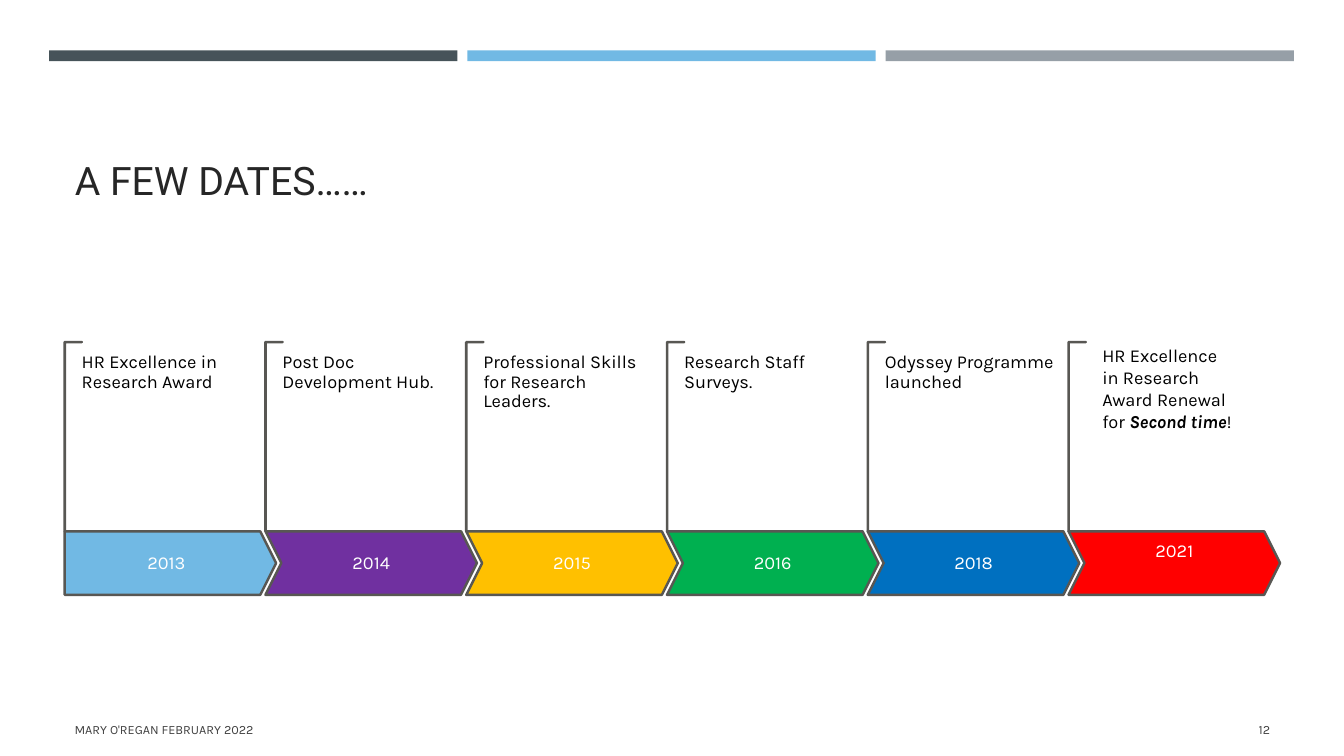
from pptx import Presentation
from pptx.dml.color import RGBColor
from pptx.enum import shapes, text
from pptx.util import Cm, Pt

COLORS = {
    "slate": "465359", "sky": "71B9E4", "grey": "969FA7", "purple": "7030A0",
    "amber": "FFC000", "green": "00B050", "blue": "0070C0", "red": "FF0000",
    "outline": "585753", "sand": "EBDDC3", "white": "FFFFFF", "black": "000000",
    "title": "262626", "footer": "404040",
}
MILESTONES = [
    ("2013", "sky", ["HR Excellence in Research Award"]),
    ("2014", "purple", ["Post Doc Development Hub."]),
    ("2015", "amber", ["Professional Skills for Research Leaders."]),
    ("2016", "green", ["Research Staff Surveys."]),
    ("2018", "blue", ["Odyssey Programme launched"]),
    ("2021", "red", ["HR Excellence in Research Award Renewal for ", "Second time", "!"]),
]
LEFT, WIDTH = 1.63, 30.63
SHAPE = shapes.MSO_SHAPE
ALIGN = text.PP_ALIGN
ANCHOR = text.MSO_ANCHOR


def rgb(name):
    return RGBColor.from_string(COLORS[name])


def set_all(obj, values):
    for name, value in values.items():
        setattr(obj, name, value)


def write(sp, runs, size, color, font="Karla", para=None, frame=None):
    """Fill a shape with one paragraph; every second run is bold italic."""
    tf = sp.text_frame
    set_all(tf, {"word_wrap": True, "auto_size": text.MSO_AUTO_SIZE.NONE, **(frame or {})})
    p = tf.paragraphs[0]
    set_all(p, {"alignment": ALIGN.LEFT, **(para or {})})
    for i, words in enumerate(runs):
        r = p.add_run()
        r.text = words
        set_all(r.font, {"name": font, "size": Pt(size), "bold": i % 2 == 1, "italic": i % 2 == 1})
        r.font.color.rgb = rgb(color)


def add_box(slide, x, y, w, h, *args, **kwargs):
    write(slide.shapes.add_textbox(Cm(x), Cm(y), Cm(w), Cm(h)), *args, **kwargs)


def add_shape(slide, kind, x, y, w, h, fill, line=None, adjust=()):
    sp = slide.shapes.add_shape(kind, Cm(x), Cm(y), Cm(w), Cm(h))
    sp.shadow.inherit = False
    sp.fill.solid()
    sp.fill.fore_color.rgb = rgb(fill)
    if line:
        sp.line.color.rgb = rgb(line)
        sp.line.width = Pt(1.75)
    else:
        sp.line.fill.background()
    for i, value in enumerate(adjust):
        sp.adjustments[i] = value
    return sp


def add_top_bars(slide, x, y, w, h, gap=0.25):
    names = ("slate", "sky", "grey")
    bar = (w - gap * (len(names) - 1)) / len(names)
    for i, name in enumerate(names):
        add_shape(slide, SHAPE.RECTANGLE, x + i * (bar + gap), y, bar, h, name)


def add_title(slide, x, y, w, h):
    title = slide.shapes.title
    set_all(title, {"left": Cm(x), "top": Cm(y), "width": Cm(w), "height": Cm(h)})
    write(title, ["A FEW DATES……"], 28, "title", "Roboto",
          frame={"vertical_anchor": ANCHOR.BOTTOM})


def add_timeline(slide, x, y, w, h):
    arrow_w, arrow_h, bracket_w = 5.33, 1.6, 0.43
    bracket_h = h - arrow_h
    last = len(MILESTONES) - 1
    pitch = (w - arrow_w) / last
    no_margins = {f"margin_{side}": 0 for side in ("left", "top", "right", "bottom")}
    for i, (year, color, caption) in enumerate(MILESTONES):
        left = x + i * pitch
        add_shape(slide, SHAPE.HALF_FRAME, left, y, bracket_w, bracket_h,
                  "sand", "outline", (0.01, 0.01))
        kind = SHAPE.CHEVRON if i else SHAPE.PENTAGON
        arrow = add_shape(slide, kind, left, y + bracket_h, arrow_w, arrow_h,
                          color, "outline", (0.25,))
        lift = Cm(0.56) if i == last else 0
        write(arrow, [year], 13, "white", para={"alignment": ALIGN.CENTER, "line_spacing": 0.9},
              frame={**no_margins, "margin_bottom": lift, "vertical_anchor": ANCHOR.MIDDLE})
        if i == last:
            add_box(slide, left + 0.6, y - 0.06, 3.89, 2.49, caption, 13, "black")
        else:
            add_box(slide, left + bracket_w, y + 0.27, 4.32, 3.05, caption, 13, "black",
                    para={"line_spacing": 0.9}, frame=no_margins)


def add_footer(slide, x, y, w, h, number_w=2.92):
    middle = {"vertical_anchor": ANCHOR.MIDDLE}
    add_box(slide, x, y, 19.2, h, ["MARY O'REGAN FEBRUARY 2022"], 9, "footer", frame=middle)
    add_box(slide, x + w - number_w, y, number_w, h, ["12"], 9, "footer",
            para={"alignment": ALIGN.RIGHT}, frame=middle)


def main():
    prs = Presentation()
    set_all(prs, {"slide_width": Cm(33.87), "slide_height": Cm(19.05)})
    slide = prs.slides.add_slide(prs.slide_layouts[5])
    add_top_bars(slide, 1.24, 1.27, 31.37, 0.27)
    add_title(slide, LEFT, 1.96, WIDTH, 3.3)
    add_timeline(slide, LEFT, 8.62, WIDTH, 6.37)
    add_footer(slide, LEFT, 17.86, WIDTH, 1.02)
    prs.save("out.pptx")


if __name__ == "__main__":
    main()
